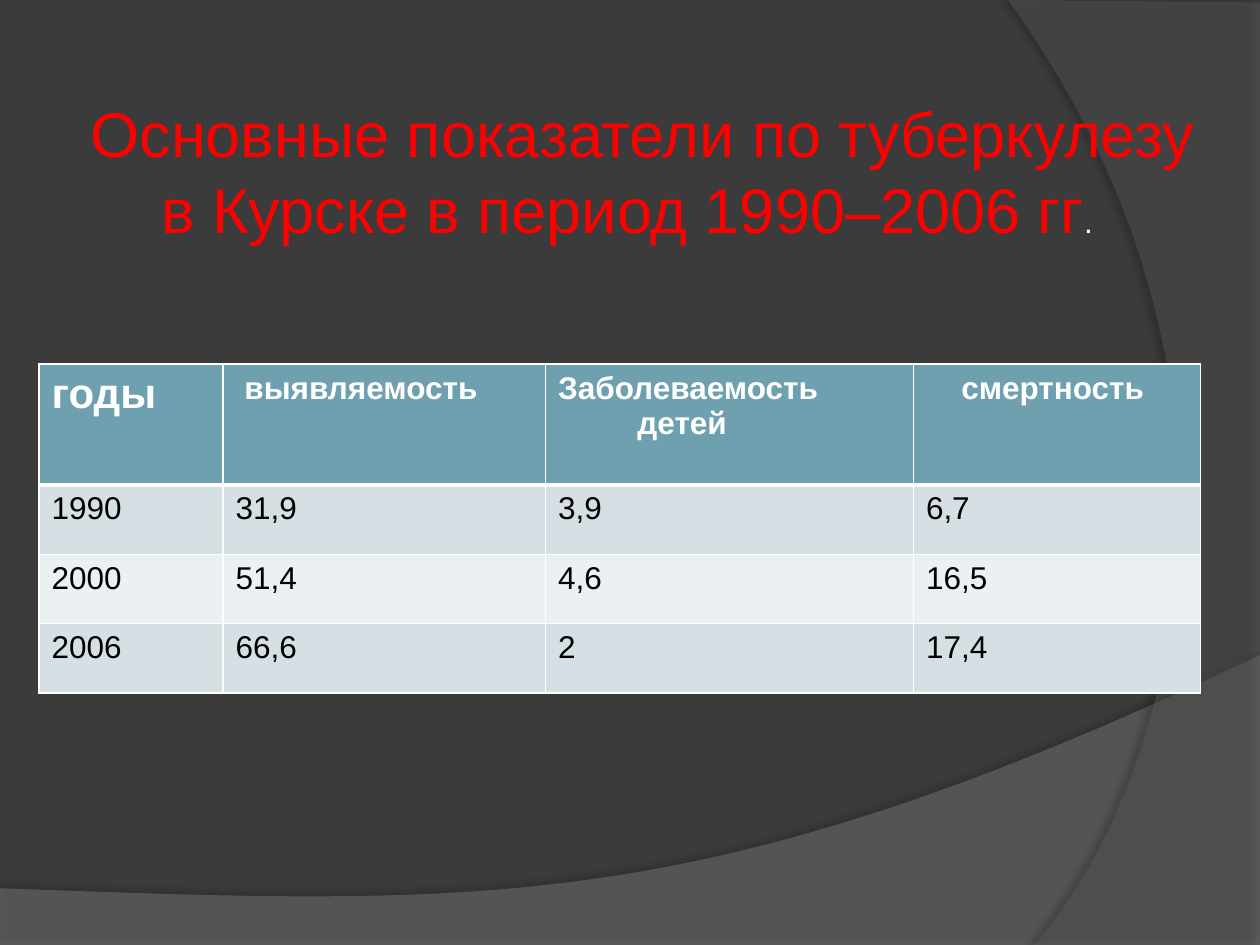
from lxml.etree import SubElement
from pptx import Presentation
from pptx.dml.color import RGBColor
from pptx.enum.text import MSO_ANCHOR, MSO_AUTO_SIZE, PP_ALIGN
from pptx.oxml.ns import qn
from pptx.util import Inches, Pt

FONT = "Arial"
BACK = RGBColor(0x3B, 0x3B, 0x3B)
WAVE = RGBColor(0x7F, 0x7F, 0x7F)
ARC = RGBColor(0x5E, 0x5E, 0x5E)
RED = RGBColor(0xFF, 0x00, 0x00)
WHITE = RGBColor(0xFF, 0xFF, 0xFF)
BLACK = RGBColor(0x00, 0x00, 0x00)
HEAD = RGBColor(0x6E, 0xA0, 0xB0)
BANDS = [RGBColor(0xD5, 0xDF, 0xE4), RGBColor(0xEB, 0xF0, 0xF2)]

COLS = [1.46, 2.56, 2.92, 2.28]
ROWS = [0.96, 0.55, 0.55, 0.55]
# Header cells: size, then lines of (indent, text)
HEADS = [
    (24, [(0, "годы")]),
    (18, [(0.07, "выявляемость")]),
    (18, [(0, "Заболеваемость"), (0.63, "детей")]),
    (18, [(0.28, "смертность")]),
]
DATA = [
    ["1990", "31,9", "3,9", "6,7"],
    ["2000", "51,4", "4,6", "16,5"],
    ["2006", "66,6", "2", "17,4"],
]


def curve(start, ctrl1, ctrl2, end, steps=60):
    """Points along a cubic Bezier curve."""
    points = []
    for i in range(steps + 1):
        t = i / steps
        u = 1 - t
        points.append(tuple(
            u**3 * a + 3 * u * u * t * b + 3 * u * t * t * c + t**3 * d
            for a, b, c, d in zip(start, ctrl1, ctrl2, end)))
    return points


def add_swoosh(slide, points, color, alpha, shade, dist, angle):
    """Translucent outline with a soft shadow."""
    spots = [(Inches(x), Inches(y)) for x, y in points]
    pen = slide.shapes.build_freeform(*spots[0])
    pen.add_line_segments(spots[1:], close=True)
    shape = pen.convert_to_shape()
    shape.fill.solid()
    shape.fill.fore_color.rgb = color
    tint = shape.element.spPr.find(".//" + qn("a:srgbClr"))
    SubElement(tint, qn("a:alpha"), val=str(alpha * 1000))
    shape.line.fill.background()
    shape.shadow.inherit = False
    effects = shape.element.spPr.find(qn("a:effectLst"))
    outer = SubElement(effects, qn("a:outerShdw"), blurRad=str(Pt(4)),
                       dist=str(Pt(dist)), dir=str(angle * 60000),
                       algn="ctr", rotWithShape="0")
    dark = SubElement(outer, qn("a:srgbClr"), val=str(BLACK))
    SubElement(dark, qn("a:alpha"), val=str(shade * 1000))
    return shape


def add_run(para, text, size, color, bold=False):
    run = para.add_run()
    run.text = text
    font = run.font
    font.name, font.size, font.bold = FONT, Pt(size), bold
    font.color.rgb = color


def indent(para, width):
    props = para._p.get_or_add_pPr()
    props.set("marL", str(Inches(width)))
    props.set("indent", "0")


def set_title(slide):
    title = slide.shapes.title
    title.left, title.top = Inches(0.62), Inches(0.7)
    title.width, title.height = Inches(8.98), Inches(1.31)
    frame = title.text_frame
    frame.word_wrap = True
    frame.auto_size = MSO_AUTO_SIZE.NONE
    frame.vertical_anchor = MSO_ANCHOR.TOP
    frame.margin_right = 0
    first, second = frame.paragraphs[0], frame.add_paragraph()
    for para in (first, second):
        para.alignment = PP_ALIGN.LEFT
        para.space_before = Pt(0)
    add_run(first, "Основные показатели по туберкулезу", 36, RED)
    indent(second, 0.56)
    add_run(second, "в Курске в период 1990–2006 гг", 36, RED)
    add_run(second, ".", 18, WHITE)
    return title


def fill_cell(cell, lines, size, ink, fill, bold, top, bottom):
    """Borders, fill and text of one table cell."""
    props = cell._tc.get_or_add_tcPr()
    for side, width in (("L", 1), ("R", 1), ("T", top), ("B", bottom)):
        edge = SubElement(props, qn("a:ln" + side), w=str(Pt(width)))
        SubElement(SubElement(edge, qn("a:solidFill")),
                   qn("a:srgbClr"), val=str(WHITE))
    cell.fill.solid()
    cell.fill.fore_color.rgb = fill
    frame = cell.text_frame
    for i, (shift, text) in enumerate(lines):
        para = frame.add_paragraph() if i else frame.paragraphs[0]
        indent(para, shift)
        add_run(para, text, size, ink, bold)


def add_grid(slide):
    table = slide.shapes.add_table(
        len(ROWS), len(COLS), Inches(0.31), Inches(2.89),
        Inches(sum(COLS)), Inches(sum(ROWS))).table
    for col, width in zip(table.columns, COLS):
        col.width = Inches(width)
    for row, height in zip(table.rows, ROWS):
        row.height = Inches(height)
    for c, (size, lines) in enumerate(HEADS):
        fill_cell(table.cell(0, c), lines, size, WHITE, HEAD, True, 1, 3)
    for r, values in enumerate(DATA):
        for c, text in enumerate(values):
            fill_cell(table.cell(r + 1, c), [(0, text)], 18, BLACK,
                      BANDS[r % 2], False, 1 if r else 3, 1)


def main():
    prs = Presentation()
    prs.slide_width, prs.slide_height = Inches(10), Inches(7.5)
    slide = prs.slides.add_slide(prs.slide_layouts[5])

    # Backdrop
    slide.background.fill.solid()
    slide.background.fill.fore_color.rgb = BACK
    wave = curve((10, 5.2), (5.59, 7.29), (3.91, 7.19), (0, 7.05))
    add_swoosh(slide, [(0, 7.51), (10, 7.51)] + wave, WAVE, 45, 35, 3.5, 270)
    arc = curve((8.21, 7.5), (9.35, 6.19), (10.18, 3), (8, 0))
    last = add_swoosh(slide, [(10, 0.02), (10, 7.5)] + arc,
                      ARC, 40, 45, 4, 180)

    # Title, in front of the backdrop
    title = set_title(slide)
    last.element.addnext(title.element)

    # Table
    add_grid(slide)
    prs.save("out.pptx")


if __name__ == "__main__":
    main()
